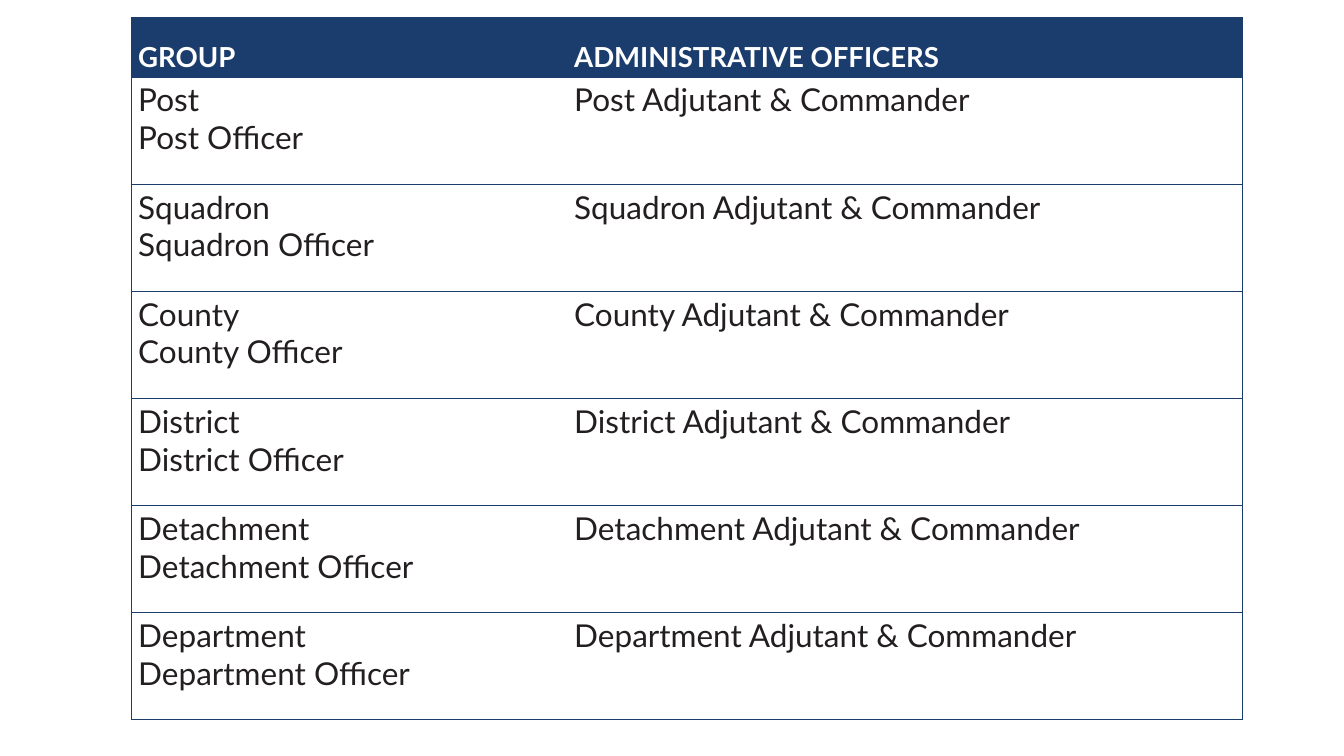
from collections import namedtuple

from lxml import etree
from pptx import Presentation
from pptx.dml.color import RGBColor
from pptx.enum.text import MSO_ANCHOR, PP_ALIGN
from pptx.oxml.ns import qn
from pptx.util import Pt

TOP, BOTTOM = MSO_ANCHOR.TOP, MSO_ANCHOR.BOTTOM
LEFT = PP_ALIGN.LEFT

Box = namedtuple("Box", "left top width height")

NAVY, INK, WHITE = "1B3D6D", "231F20", "FFFFFF"
FONT = "Lato"
HEADER_HEIGHT = 60.5
GROUP_WIDTH = 442.8
BORDER_WIDTH = 0.5
HEADINGS = ["GROUP", "ADMINISTRATIVE OFFICERS"]
GROUPS = ["Post", "Squadron", "County", "District", "Detachment", "Department"]


def color(value):
    return RGBColor.from_string(value)


def set_borders(cell, sides):
    """Draw navy lines on the named sides (L, R, T, B) and clear the others."""
    properties = cell._tc.get_or_add_tcPr()
    for index, side in enumerate("LRTB"):
        line = etree.Element(qn(f"a:ln{side}"))
        if side in sides:
            line.set("w", str(Pt(BORDER_WIDTH)))
            fill = etree.SubElement(line, qn("a:solidFill"))
            etree.SubElement(fill, qn("a:srgbClr"), val=NAVY)
        else:
            line.set("w", "0")
            etree.SubElement(line, qn("a:noFill"))
        properties.insert(index, line)


def write_cell(cell, lines, size, ink, bold=False, anchor=TOP):
    cell.vertical_anchor = anchor
    frame = cell.text_frame
    for index, text in enumerate(lines):
        para = frame.paragraphs[0] if index == 0 else frame.add_paragraph()
        para.alignment = LEFT
        span = para.add_run()
        span.text = text
        span.font.name = FONT
        span.font.size = Pt(size)
        span.font.bold = bold
        span.font.color.rgb = color(ink)


def add_officer_table(page, box):
    frame = page.shapes.add_table(len(GROUPS) + 1, len(HEADINGS),
                                  *(Pt(length) for length in box))
    table = frame.table
    table.first_row = table.horz_banding = False
    table.columns[0].width = Pt(GROUP_WIDTH)
    table.columns[1].width = Pt(box.width - GROUP_WIDTH)

    table.rows[0].height = Pt(HEADER_HEIGHT)
    for column, heading in enumerate(HEADINGS):
        cell = table.cell(0, column)
        cell.fill.solid()
        cell.fill.fore_color.rgb = color(NAVY)
        write_cell(cell, [heading], 28, WHITE, bold=True, anchor=BOTTOM)
        set_borders(cell, "LTB" if column == 0 else "RTB")

    row_height = (box.height - HEADER_HEIGHT) / len(GROUPS)
    for row, group in enumerate(GROUPS, start=1):
        table.rows[row].height = Pt(row_height)
        entries = [[group, f"{group} Officer"], [f"{group} Adjutant & Commander"]]
        for column, lines in enumerate(entries):
            cell = table.cell(row, column)
            cell.fill.background()
            write_cell(cell, lines, 32, INK)
            set_borders(cell, "LTB" if column == 0 else "RTB")


def main():
    deck = Presentation()
    deck.slide_width, deck.slide_height = Pt(1365.12), Pt(768.24)
    page = deck.slides.add_slide(deck.slide_layouts[6])
    add_officer_table(page, Box(133.2, 18, 1128.24, 713.3))
    deck.save("out.pptx")


if __name__ == "__main__":
    main()
